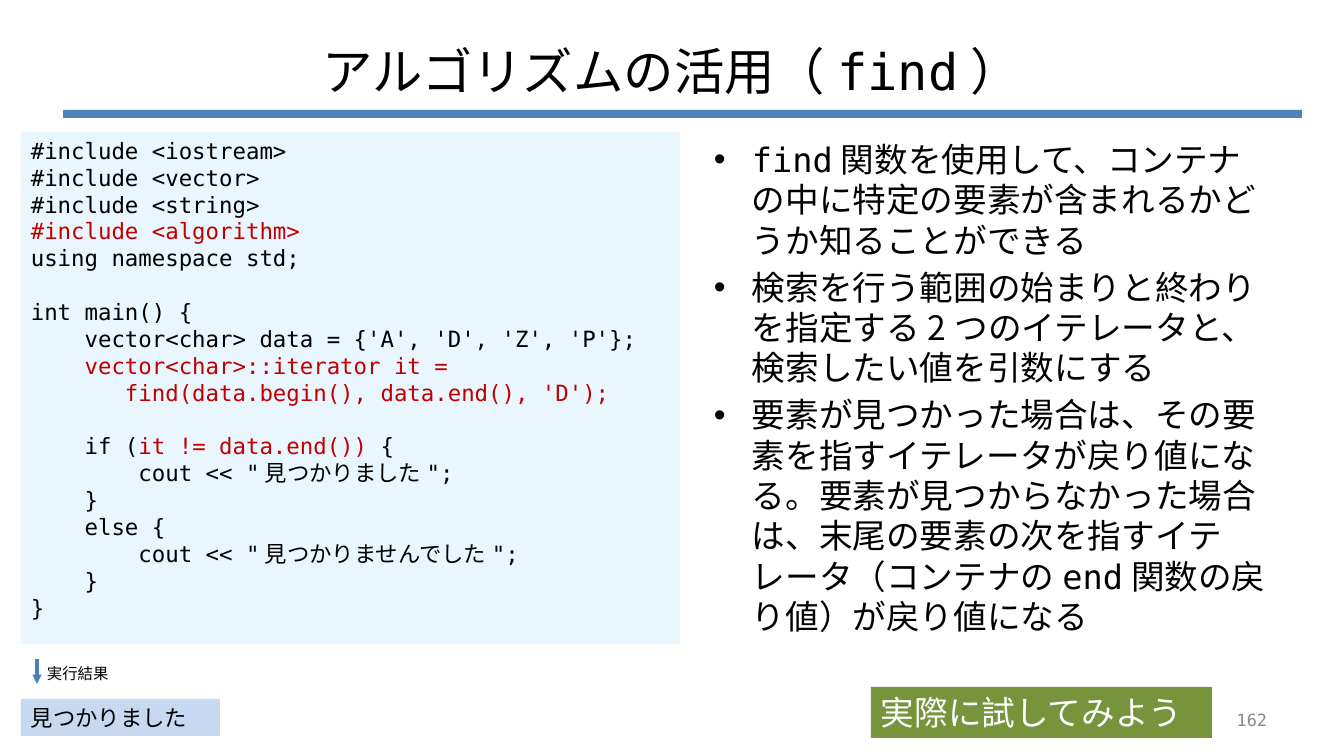
from pptx import Presentation
from pptx.dml.color import RGBColor
from pptx.enum.shapes import MSO_CONNECTOR, MSO_SHAPE
from pptx.enum.text import MSO_ANCHOR, PP_ALIGN
from pptx.oxml.ns import qn
from pptx.util import Pt
from lxml import etree

RECTANGLE = MSO_SHAPE.RECTANGLE
STRAIGHT = MSO_CONNECTOR.STRAIGHT
TOP, MIDDLE = MSO_ANCHOR.TOP, MSO_ANCHOR.MIDDLE
LEFT, CENTER, RIGHT = PP_ALIGN.LEFT, PP_ALIGN.CENTER, PP_ALIGN.RIGHT

BLACK = RGBColor(0x00, 0x00, 0x00)
WHITE = RGBColor(0xFF, 0xFF, 0xFF)
RED = RGBColor(0xC0, 0x00, 0x00)
GRAY = RGBColor(0x89, 0x89, 0x89)
RULE_BLUE = RGBColor(0x4F, 0x81, 0xBD)
ARROW_BLUE = RGBColor(0x4B, 0x7E, 0xBC)
CODE_BLUE = RGBColor(0xEA, 0xF6, 0xFD)
RESULT_BLUE = RGBColor(0xC6, 0xD9, 0xF1)
GREEN = RGBColor(0x77, 0x93, 0x3C)

SANS, MONO, JAPANESE = "Arial", "DejaVu Sans Mono", "Noto Sans CJK JP"
PX_PER_INCH = 100.8
BULLET_INDENT = 38

CODE = [
    [("#include <iostream>", BLACK)],
    [("#include <vector>", BLACK)],
    [("#include <string>", BLACK)],
    [("#include <algorithm>", RED)],
    [("using namespace std;", BLACK)],
    [],
    [("int main() {", BLACK)],
    [("    vector<char> data = {'A', 'D', 'Z', 'P'};", BLACK)],
    [("    vector<char>::iterator it = ", RED)],
    [("       find(data.begin(), data.end(), 'D');", RED)],
    [],
    [("    if (", BLACK), ("it != data.end()) ", RED), ("{", BLACK)],
    [('        cout << "見つかりました";', BLACK)],
    [("    }", BLACK)],
    [("    else {", BLACK)],
    [('        cout << "見つかりませんでした";', BLACK)],
    [("    }", BLACK)],
    [("}", BLACK)],
]

EXPLANATION = [
    [("find", MONO),
     ("関数を使用して、コンテナの中に特定の要素が含まれるかどうか知ることができる", JAPANESE)],
    [("検索を行う範囲の始まりと終わりを指定する2つのイテレータと、検索したい値を引数にする", JAPANESE)],
    [("要素が見つかった場合は、その要素を指すイテレータが戻り値になる。要素が見つからなかった場合は、"
      "末尾の要素の次を指すイテレータ（コンテナの", JAPANESE),
     ("end", MONO), ("関数の戻り値）が戻り値になる", JAPANESE)],
]


def px(length):
    """Turn px into EMU."""
    return round(length * 914400 / PX_PER_INCH)


def add_panel(slide, box, fill):
    """Add a plain filled rectangle."""
    panel = slide.shapes.add_shape(RECTANGLE, *map(px, box))
    panel.shadow.inherit = False
    panel.fill.solid()
    panel.fill.fore_color.rgb = fill
    panel.line.fill.background()
    return panel


def add_text_area(slide, box):
    """Add an empty text box."""
    return slide.shapes.add_textbox(*map(px, box))


def write(area, paragraphs, size, align=LEFT, anchor=TOP, wrap=True):
    """Write paragraphs of (text, font, colour) runs."""
    frame = area.text_frame
    frame.word_wrap = wrap
    frame.vertical_anchor = anchor
    for index, runs in enumerate(paragraphs):
        paragraph = frame.paragraphs[0] if index == 0 else frame.add_paragraph()
        paragraph.alignment = align
        for text, font, color in runs:
            run = paragraph.add_run()
            run.text = text
            run.font.size = Pt(size)
            run.font.name = font
            run.font.color.rgb = color
            east_asian = etree.SubElement(run.font._element, qn("a:ea"))
            east_asian.set("typeface", JAPANESE)
        if not runs:
            end = etree.SubElement(paragraph._p, qn("a:endParaRPr"), sz=str(size * 100))
            etree.SubElement(end, qn("a:latin"), typeface=MONO)
    return frame


def add_heading(slide, left, top, width, height):
    """Add the title and the rule below it."""
    add_panel(slide, (left - 4, top + height, width + 29, 8), RULE_BLUE)
    title = add_text_area(slide, (left, top, width, height))
    runs = [("アルゴリズムの活用（", SANS, BLACK), ("find", MONO, BLACK), ("）", SANS, BLACK)]
    write(title, [runs], 36, CENTER, MIDDLE)


def add_code(slide, *box):
    """Add the program listing."""
    lines = [[(text, MONO, color) for text, color in line] for line in CODE]
    write(add_panel(slide, box, CODE_BLUE), lines, 16)


def add_explanation(slide, *box):
    """Add the bulleted explanation."""
    points = [[(text, font, BLACK) for text, font in point] for point in EXPLANATION]
    frame = write(add_text_area(slide, box), points, 24)
    for index, paragraph in enumerate(frame.paragraphs):
        properties = paragraph._p.get_or_add_pPr()
        properties.set("marL", str(px(BULLET_INDENT)))
        properties.set("indent", str(-px(BULLET_INDENT)))
        etree.SubElement(properties, qn("a:buFont"), typeface=SANS)
        etree.SubElement(properties, qn("a:buChar"), char="•")
        if index:
            paragraph.space_before = Pt(4.8)


def add_result(slide, left, top, width, height):
    """Add the arrow, its label and the program output."""
    arrow_x = left + 16
    arrow = slide.shapes.add_connector(
        STRAIGHT, px(arrow_x), px(top), px(arrow_x), px(top + 25))
    arrow.line.color.rgb = ARROW_BLUE
    arrow.line.width = Pt(2.25)
    etree.SubElement(arrow.line._get_or_add_ln(), qn("a:tailEnd"), type="triangle")
    etree.SubElement(arrow._element.spPr, qn("a:effectLst"))
    label = add_text_area(slide, (arrow_x, top, 83, 29))
    write(label, [[("実行結果", SANS, BLACK)]], 11, wrap=False)
    output = add_panel(slide, (left, top + height - 37, width, 37), RESULT_BLUE)
    write(output, [[("見つかりました", MONO, BLACK)]], 16)


def add_footer(slide, left, top, width, height):
    """Add the call to try it and the slide number."""
    invitation = add_panel(slide, (left, top, width, height), GREEN)
    write(invitation, [[("実際に試してみよう", MONO, WHITE)]], 24)
    number = add_text_area(slide, (left + 93, top + 13, 313, 40))
    write(number, [[("162", MONO, GRAY)]], 12, RIGHT, MIDDLE)


def main():
    """Build and save the slide."""
    deck = Presentation()
    deck.slide_width, deck.slide_height = px(1344), px(756)
    slide = deck.slides.add_slide(deck.slide_layouts[6])
    add_heading(slide, 67, 30, 1210, 80)
    add_explanation(slide, 704, 134, 574, 551)
    add_code(slide, 21, 132, 659, 512)
    add_result(slide, 21, 659, 199, 77)
    add_footer(slide, 871, 687, 341, 51)
    deck.save("out.pptx")


if __name__ == "__main__":
    main()
